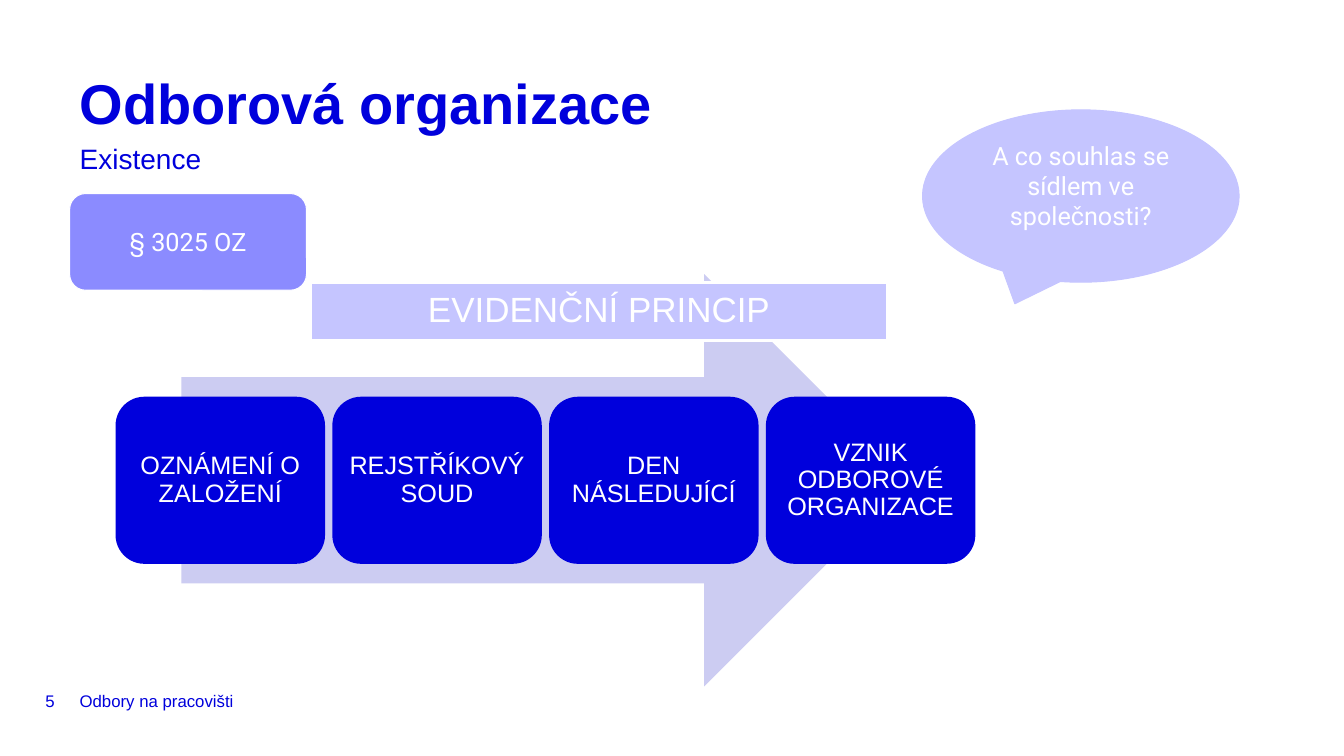
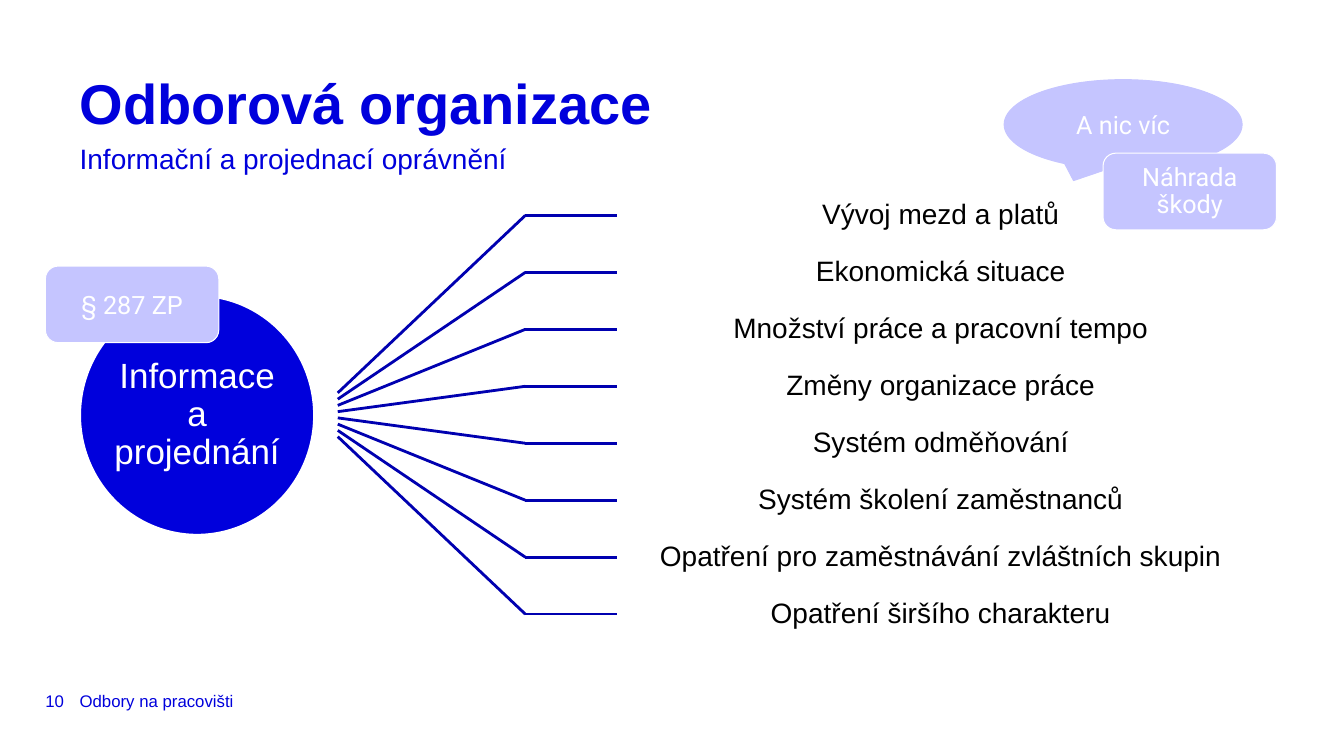
from dataclasses import dataclass

from lxml.etree import SubElement
from pptx import Presentation
from pptx.dml.color import RGBColor
from pptx.enum.shapes import MSO_CONNECTOR, MSO_SHAPE
from pptx.enum.text import MSO_ANCHOR, PP_ALIGN
from pptx.oxml.ns import qn
from pptx.shapes.autoshape import Shape
from pptx.shapes.connector import Connector
from pptx.slide import Slide
from pptx.util import Inches, Length, Pt

# Shared colours and fonts
BLUE, NAVY, BLACK, WHITE = "0000DC", "0000B0", "000000", "FFFFFF"
PALE, MID, HAZE = "C5C5FF", "8B8BFF", "CCCCF2"
BASE, NOTE = "Arial", "Roboto"

Box = tuple[float, float, float, float]
Dot = tuple[float, float]


@dataclass
class Style:
    """Format of a text."""
    size: float
    color: str = WHITE
    name: str = BASE
    bold: bool = False
    align: PP_ALIGN = PP_ALIGN.CENTER
    anchor: MSO_ANCHOR = MSO_ANCHOR.MIDDLE
    pads: Dot = (0, 0)
    lead: float | Length = 1.0


@dataclass
class Part:
    """A filled shape with an optional text."""
    kind: MSO_SHAPE
    at: Box
    fill: str
    line: str | None = None
    width: float = 0.75
    text: str = ""
    style: Style | None = None


LEFT, TOP = PP_ALIGN.LEFT, MSO_ANCHOR.TOP
TITLE = Style(40, BLUE, bold=True, align=LEFT, anchor=TOP, lead=Pt(40))
SUB = Style(20, BLUE, align=LEFT, anchor=TOP, lead=Pt(23))
FOOT = Style(12, BLUE, align=LEFT)
STEP = Style(18, pads=(0.07, 0.07), lead=0.9)
BAND = Style(25, pads=(0.1, 0.1), lead=0.9)
HUB = Style(25, lead=0.9)
ITEM = Style(20, BLACK, pads=(0.16, 0.16), lead=0.9)
TAG = Style(18, name=NOTE, pads=(0.1, 0.05))
TIGHT = Style(18, name=NOTE, pads=(0.1, 0.05), lead=0.9)
SPEECH = Style(18, name=NOTE, pads=(0.1, 0.05), anchor=TOP)


def rgb(code: str) -> RGBColor:
    return RGBColor.from_string(code)


def put(target: object, values: dict[str, object]) -> None:
    for key, value in values.items():
        setattr(target, key, value)


def write(shape: Shape, text: str, style: Style) -> None:
    frame = shape.text_frame
    side, edge = (Inches(pad) for pad in style.pads)
    put(frame, {"word_wrap": True, "vertical_anchor": style.anchor,
                "margin_left": side, "margin_right": side,
                "margin_top": edge, "margin_bottom": edge})
    para = frame.paragraphs[0]
    put(para, {"alignment": style.align, "line_spacing": style.lead})
    run = para.add_run()
    run.text = text
    put(run.font, {"name": style.name, "size": Pt(style.size),
                   "bold": style.bold})
    run.font.color.rgb = rgb(style.color)


def label(slide: Slide, at: Box, text: str, style: Style) -> Shape:
    shape = slide.shapes.add_textbox(*map(Inches, at))
    write(shape, text, style)
    return shape


def draw(slide: Slide, part: Part) -> None:
    shape = slide.shapes.add_shape(part.kind, *map(Inches, part.at))
    shape.shadow.inherit = False
    shape.fill.solid()
    shape.fill.fore_color.rgb = rgb(part.fill)
    if part.line:
        shape.line.color.rgb = rgb(part.line)
        shape.line.width = Pt(part.width)
    else:
        shape.line.fill.background()
    if part.style:
        write(shape, part.text, part.style)


def link(slide: Slide, start: Dot, end: Dot) -> Connector:
    line = slide.shapes.add_connector(
        MSO_CONNECTOR.STRAIGHT, *map(Inches, start + end))
    line.line.color.rgb = rgb(NAVY)
    line.line.width = Pt(2)
    SubElement(line._element.spPr, qn("a:effectLst"))
    return line


def frame(slide: Slide, sub: str, page: int) -> None:
    """Title, subtitle and footer of every slide."""
    label(slide, (0.79, 6.81, 8.66, 0.28), "Odbory na pracovišti", FOOT)
    label(slide, (0.45, 6.81, 0.28, 0.28), str(page), FOOT)
    label(slide, (0.79, 1.42, 11.76, 0.3), sub, SUB)
    label(slide, (0.79, 0.79, 11.76, 0.49), "Odborová organizace", TITLE)


def origin(slide: Slide) -> None:
    frame(slide, "Existence", 5)
    # Process arrow with its steps
    draw(slide, Part(MSO_SHAPE.RIGHT_ARROW, (1.8, 2.72, 7.23, 4.09), HAZE))
    steps = ("OZNÁMENÍ O ZALOŽENÍ", "REJSTŘÍKOVÝ SOUD",
             "DEN NÁSLEDUJÍCÍ", "VZNIK ODBOROVÉ ORGANIZACE")
    for i, text in enumerate(steps):
        draw(slide, Part(MSO_SHAPE.ROUNDED_RECTANGLE,
                         (1.16 + 2.15 * i, 3.95, 2.05, 1.63),
                         BLUE, BLUE, 2, text, STEP))
    # Band, tag and speech bubble
    for part in (
        Part(MSO_SHAPE.RECTANGLE, (3.08, 2.8, 5.72, 0.58), PALE, WHITE, 2,
             "EVIDENČNÍ PRINCIP", BAND),
        Part(MSO_SHAPE.ROUNDED_RECTANGLE, (0.69, 1.92, 2.35, 0.96), MID,
             WHITE, text="§ 3025 OZ", style=TAG),
        Part(MSO_SHAPE.OVAL_CALLOUT, (9.15, 1.09, 3.14, 1.71), PALE, PALE,
             text="A co souhlas se sídlem ve společnosti?", style=SPEECH),
    ):
        draw(slide, part)


def rights(slide: Slide) -> None:
    # Hub
    draw(slide, Part(MSO_SHAPE.OVAL, (0.79, 2.93, 2.33, 2.38), BLUE, WHITE,
                     2, "Informace a projednání", HUB))
    # Fan of topics, spread evenly about the hub's middle
    topics = ("Vývoj mezd a platů", "Ekonomická situace",
              "Množství práce a pracovní tempo", "Změny organizace práce",
              "Systém odměňování", "Systém školení zaměstnanců",
              "Opatření pro zaměstnávání zvláštních skupin",
              "Opatření širšího charakteru")
    mid, high = 4.115, 0.57
    for i, text in enumerate(topics):
        off = i - (len(topics) - 1) / 2
        y = mid + 0.565 * off
        link(slide, (3.35, mid + 0.062 * off), (5.21, y))
        ray = link(slide, (5.21, y), (6.12, y))
        item = label(slide, (6.12, y - high / 2, 6.42, high), text, ITEM)
        ray.end_connect(item, 1)
    frame(slide, "Informační a projednací oprávnění", 10)
    # Speech bubble and tags
    draw(slide, Part(MSO_SHAPE.OVAL_CALLOUT, (9.96, 0.79, 2.36, 0.89), PALE,
                     PALE, text="A nic víc", style=TAG))
    for x, y, text, style in ((0.45, 2.64, "§ 287 ZP", TAG),
                              (10.94, 1.52, "Náhrada škody", TIGHT)):
        draw(slide, Part(MSO_SHAPE.ROUNDED_RECTANGLE, (x, y, 1.72, 0.76),
                         PALE, WHITE, text=text, style=style))


def main() -> None:
    deck = Presentation()
    put(deck, {"slide_width": Inches(13.33), "slide_height": Inches(7.5)})
    for build in (origin, rights):
        build(deck.slides.add_slide(deck.slide_layouts[6]))
    deck.save("out.pptx")


if __name__ == "__main__":
    main()
